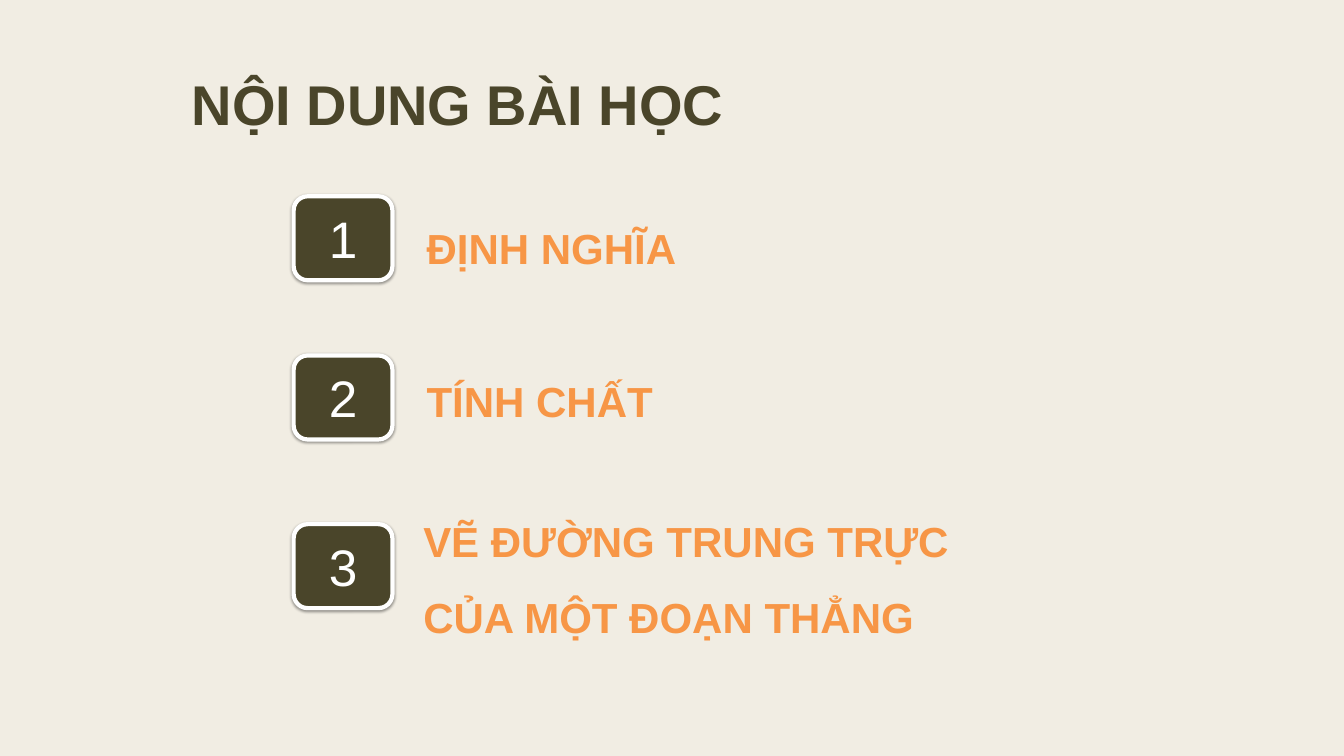
"""Build the lesson contents slide: a title and three numbered topics."""
from lxml import etree
from pptx import Presentation
from pptx import util as u
from pptx.dml.color import RGBColor
from pptx.enum import shapes, text
from pptx.oxml.ns import qn

COLOURS = {"paper": "F1EDE3", "olive": "4A452A", "orange": "F79646",
           "white": "FFFFFF", "shadow": "000000"}

deck = Presentation()
deck.slide_width, deck.slide_height = u.Inches(20), u.Inches(11.25)


def share(left, top, width, height):
    """Turn percentages of the slide into a position and a size."""
    across, down = deck.slide_width / 100, deck.slide_height / 100
    return [u.Emu(round(part * unit)) for part, unit in
            zip((left, top, width, height), (across, down, across, down))]


def write(holder, words, size, colour, bold=False, align=text.PP_ALIGN.LEFT,
          anchor=text.MSO_ANCHOR.TOP, spacing=1.0, wrap=True,
          fit=text.MSO_AUTO_SIZE.NONE):
    frame = holder.text_frame
    frame.text = words
    frame.word_wrap, frame.auto_size, frame.vertical_anchor = wrap, fit, anchor
    line = frame.paragraphs[0]
    line.alignment, line.line_spacing = align, spacing
    font = line.runs[0].font
    font.name, font.size, font.bold = "Arial", u.Pt(size), bold
    font.color.rgb = RGBColor.from_string(COLOURS[colour])


slide = deck.slides.add_slide(deck.slide_layouts[5])
slide.background.fill.solid()
slide.background.fill.fore_color.rgb = RGBColor.from_string(COLOURS["paper"])

heading = slide.shapes.title
heading.left, heading.top, heading.width, heading.height = share(9.75, 9.96, 48.6, 7.47)
write(heading, "NỘI DUNG BÀI HỌC", 60, "olive", bold=True,
      align=text.PP_ALIGN.CENTER, anchor=text.MSO_ANCHOR.MIDDLE)
margins = heading.text_frame
margins.margin_left = margins.margin_right = u.Inches(0.13)
margins.margin_top = margins.margin_bottom = u.Inches(0.13)

topics = [
    ("ĐỊNH NGHĨA", 25.96, (31.25, 25.6, 52.25, 9.78),
     {"spacing": 1.5, "align": text.PP_ALIGN.JUSTIFY}),
    ("TÍNH CHẤT", 47.02, (31.25, 49.24, 18, 7.64), {"wrap": False}),
    ("VẼ ĐƯỜNG TRUNG TRỰC CỦA MỘT ĐOẠN THẲNG", 69.33,
     (31, 64.44, 41.05, 21.07), {"spacing": 1.5}),
]

for number, (topic, badge_top, area, layout) in enumerate(topics, 1):
    label = slide.shapes.add_textbox(*share(*area))
    write(label, topic, 45, "orange", bold=True,
          fit=text.MSO_AUTO_SIZE.SHAPE_TO_FIT_TEXT, **layout)

    badge = slide.shapes.add_shape(shapes.MSO_SHAPE.ROUNDED_RECTANGLE,
                                   *share(21.85, badge_top, 7.35, 11.11))
    badge.fill.solid()
    badge.fill.fore_color.rgb = RGBColor.from_string(COLOURS["olive"])
    badge.line.color.rgb = RGBColor.from_string(COLOURS["white"])
    badge.line.width = u.Pt(4.5)
    badge.shadow.inherit = False
    effects = badge.element.spPr.find(qn("a:effectLst"))
    shade = etree.SubElement(effects, qn("a:outerShdw"), blurRad=str(u.Pt(3.1)),
                             dist=str(u.Pt(1.6)), dir="5400000", rotWithShape="0")
    tint = etree.SubElement(shade, qn("a:srgbClr"), val=COLOURS["shadow"])
    etree.SubElement(tint, qn("a:alpha"), val="38000")
    write(badge, str(number), 55, "white", align=text.PP_ALIGN.CENTER,
          anchor=text.MSO_ANCHOR.MIDDLE)

deck.save("out.pptx")
